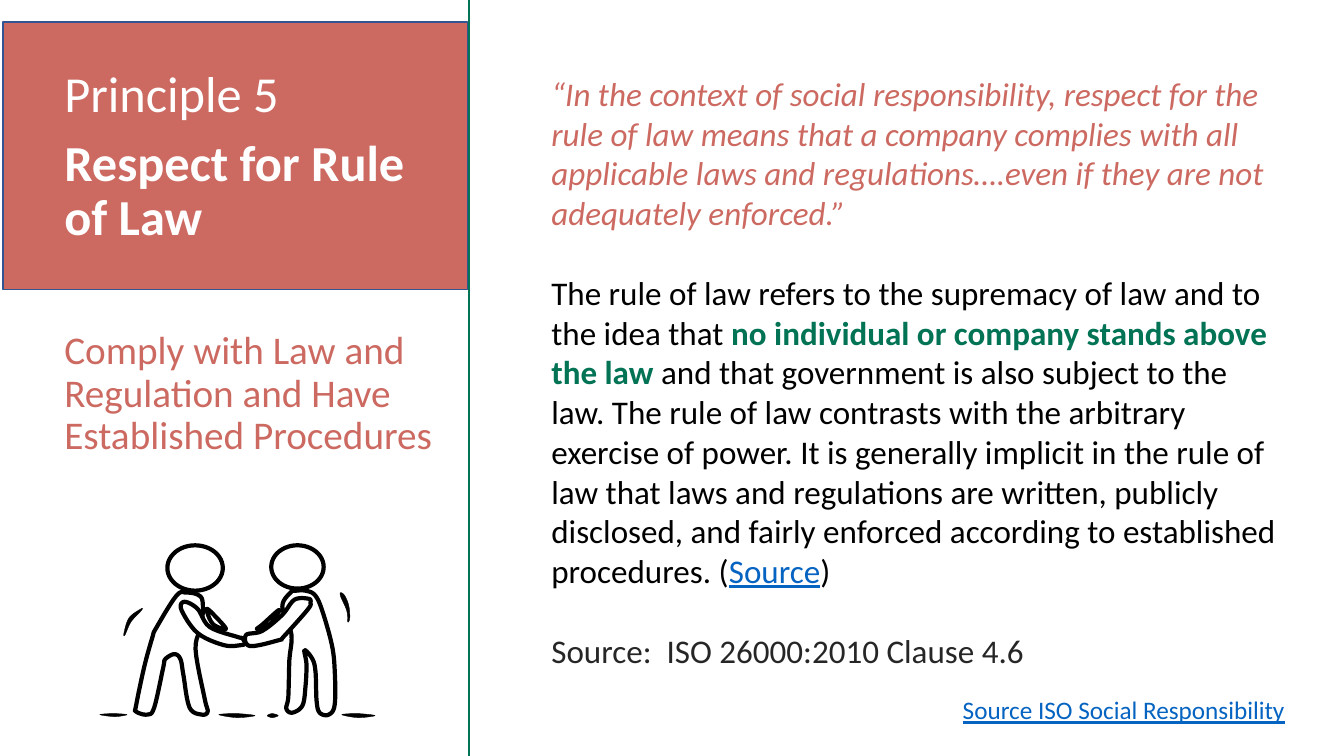
from lxml import etree
from pptx import Presentation
from pptx.dml.color import RGBColor
from pptx.enum.shapes import MSO_CONNECTOR, MSO_SHAPE
from pptx.enum.text import MSO_ANCHOR, PP_ALIGN
from pptx.oxml.ns import qn
from pptx.util import Pt

PX = 9144  # EMU per px, 100 px to the inch
RECTANGLE, OVAL = MSO_SHAPE.RECTANGLE, MSO_SHAPE.OVAL
STRAIGHT = MSO_CONNECTOR.STRAIGHT
LEFT, TOP, MIDDLE = PP_ALIGN.LEFT, MSO_ANCHOR.TOP, MSO_ANCHOR.MIDDLE

WHITE = RGBColor(0xFF, 0xFF, 0xFF)
BLACK = RGBColor(0x00, 0x00, 0x00)
CORAL = RGBColor(0xCC, 0x6A, 0x62)
NAVY = RGBColor(0x32, 0x54, 0x91)
GREEN = RGBColor(0x02, 0x73, 0x54)
CHARCOAL = RGBColor(0x26, 0x26, 0x26)
LINK_BLUE = RGBColor(0x05, 0x63, 0xC1)

prs = Presentation()
prs.slide_width, prs.slide_height = 1333 * PX, 750 * PX
slide = prs.slides.add_slide(prs.slide_layouts[6])
shapes = slide.shapes


def paint(shape, fill, line, width):
    shape.shadow.inherit = False
    shape.fill.solid()
    shape.fill.fore_color.rgb = fill
    shape.line.color.rgb = line
    shape.line.width = Pt(width)


def write(shape, paragraphs, anchor=TOP):
    frame = shape.text_frame
    frame.word_wrap = True
    frame.vertical_anchor = anchor
    for number, (layout, runs) in enumerate(paragraphs):
        paragraph = frame.paragraphs[0] if number == 0 else frame.add_paragraph()
        paragraph.alignment = LEFT
        for name, value in layout.items():
            setattr(paragraph, name, value)
        for text, color, style in runs:
            run = paragraph.add_run()
            run.text = text
            run.font.name = "Calibri"
            run.font.color.rgb = color
            for name, value in style.items():
                setattr(run.font, name, value)


# Divider and title panel
divider = shapes.add_connector(STRAIGHT, 465 * PX, 0, 465 * PX, 750 * PX)
divider.line.color.rgb = GREEN
divider.line.width = Pt(1)
etree.SubElement(divider._element.spPr, qn("a:effectLst"))

title_panel = shapes.add_shape(RECTANGLE, 3 * PX, 22 * PX, 461 * PX, 265 * PX)
paint(title_panel, CORAL, NAVY, 1)

# Quotation and explanation
body = {"size": Pt(23.6)}
next_block = {"space_before": Pt(28.8)}
explanation = shapes.add_textbox(537 * PX, 68 * PX, 742 * PX, 458 * PX)
write(explanation, [
    ({}, [("“In the context of social responsibility, respect for the rule of law "
           "means that a company complies with all applicable laws and "
           "regulations….even if they are not adequately enforced.”",
           CORAL, {**body, "italic": True})]),
    (next_block, [
        ("The rule of law refers to the supremacy of law and to the idea that ",
         BLACK, body),
        ("no individual or company stands above the law ",
         GREEN, {**body, "bold": True}),
        ("and that government is also subject to the law. The rule of law "
         "contrasts with the arbitrary exercise of power. It is generally "
         "implicit in the rule of law that laws and regulations are written, "
         "publicly disclosed, and fairly enforced according to established "
         "procedures. (", BLACK, body),
        ("Source", LINK_BLUE, {**body, "underline": True}),
        (")", BLACK, body)]),
    (next_block, [("Source:  ISO 26000:2010 Clause 4.6", CHARCOAL, body)]),
])

# Principle title and subtitle
principle = shapes.add_textbox(54 * PX, 64 * PX, 387 * PX, 614 * PX)
write(principle, [
    ({"line_spacing": 0.9}, [("Principle 5", WHITE, {"size": Pt(36)})]),
    ({"line_spacing": 0.9, "space_before": Pt(10)},
     [("Respect for Rule of Law", WHITE, {"size": Pt(36), "bold": True})]),
    ({"line_spacing": 0.9, "space_before": Pt(60)},
     [("Comply with Law and Regulation and Have Established Procedures",
       CORAL, {"size": Pt(28)})]),
])

# Handshake: outlines as knots of smooth closed curves, back to front
right_body = [(329, 639), (319, 604), (312, 590), (303, 586), (294, 586),
              (288, 588), (280, 602), (289, 629), (287, 655), (286, 691),
              (284, 703), (290, 707), (300, 700), (303, 681), (304, 659),
              (302, 645), (310, 654), (313, 667), (314, 695), (317, 707),
              (326, 709), (332, 699), (332, 665)]
left_body = [(194, 644), (203, 693), (206, 706), (200, 709), (188, 702),
             (182, 670), (179, 654), (173, 649), (164, 654), (162, 662),
             (153, 702), (146, 709), (135, 706), (135, 700), (143, 662),
             (151, 633), (155, 623), (175, 591), (185, 588), (196, 590),
             (201, 597), (200, 620)]
right_chest = [(277, 605), (261, 619), (255, 624), (268, 619)]
left_chest = [(205, 604), (215, 613), (224, 624), (211, 619)]
right_arm = [(308, 598), (306, 594), (292, 595), (280, 610), (260, 626),
             (244, 630), (248, 641), (277, 635), (281, 632), (305, 605)]
left_arm = [(240, 633), (236, 632), (208, 622), (196, 604), (183, 597),
            (180, 605), (196, 628), (222, 640), (239, 640), (243, 638)]
left_motion = [(140, 604), (128, 613), (123, 628), (124, 630), (130, 617),
               (140, 606)]
right_motion = [(345, 617), (347, 613), (346, 601), (342, 591), (338, 588),
                (338, 592), (344, 606)]
ground_marks = [[(99, 709), (112, 708), (126, 709), (114, 711)],
                [(217, 709), (235, 708), (253, 710), (235, 712)],
                [(265, 710), (270, 708), (276, 710), (270, 712)],
                [(339, 709), (355, 708), (372, 710), (355, 712)]]

figures = [right_body, left_body, right_chest, left_chest, right_arm, left_arm]
marks = [left_motion, right_motion, *ground_marks]
STEPS = 6
for knots, fill, width in ([(figure, WHITE, 3) for figure in figures]
                           + [(mark, BLACK, 0.25) for mark in marks]):
    curve = []
    for i in range(len(knots)):
        neighbours = [knots[(i + k) % len(knots)] for k in (-1, 0, 1, 2)]
        for step in range(STEPS):
            t = step / STEPS
            curve.append(tuple(
                round(PX * (2 * b + (c - a) * t
                            + (2 * a - 5 * b + 4 * c - d) * t ** 2
                            + (3 * b - a - 3 * c + d) * t ** 3) / 2)
                for a, b, c, d in zip(*neighbours)))
    builder = shapes.build_freeform(*curve[0], scale=1.0)
    builder.add_line_segments(curve[1:], close=True)
    paint(builder.convert_to_shape(), fill, BLACK, width)

for x, y, w, h in [(166, 541, 55, 45), (269, 541, 52, 43)]:
    head = shapes.add_shape(OVAL, x * PX, y * PX, w * PX, h * PX)
    paint(head, WHITE, BLACK, 3)

# Source link
source_link = shapes.add_shape(RECTANGLE, 945 * PX, 684 * PX, 362 * PX, 40 * PX)
paint(source_link, WHITE, WHITE, 0.25)
source_link.line.fill.background()
write(source_link, [({}, [("Source ISO Social Responsibility", LINK_BLUE,
                           {"size": Pt(18), "underline": True})])], MIDDLE)

prs.save("out.pptx")
